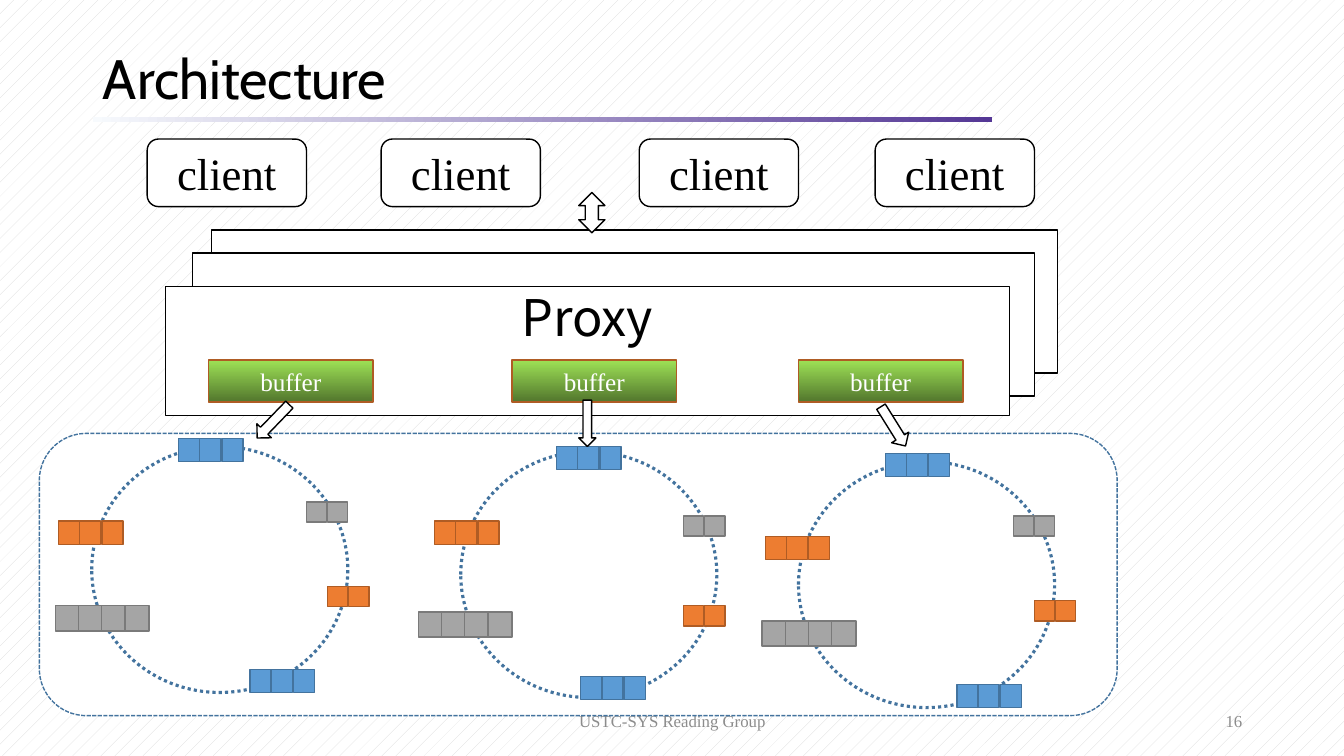
from pptx import Presentation
from pptx import util as u
from pptx.dml.color import RGBColor
from pptx.enum import dml, shapes, text

PX = 9144  # EMU per px, 100 px to the inch
SERIF = "Times New Roman"
KIND = shapes.MSO_SHAPE
ALIGN = text.PP_ALIGN
WHITE, BLACK, GREY = "FFFFFF", "000000", "8C8C8C"
BLUE, BLUE_EDGE, ORANGE_EDGE = "5B9BD5", "43739E", "AF5C24"
ORANGE, SILVER, SILVER_EDGE = "ED7D31", "A5A5A5", "7A7A7A"

# Strip name: cells, cell width, cell height, strip width, fill, edge
STRIPS = {
    "blue": (3, 21, 23, 64, BLUE, BLUE_EDGE),
    "orange": (3, 21, 23, 64, ORANGE, ORANGE_EDGE),
    "short orange": (2, 20, 20, 41, ORANGE, ORANGE_EDGE),
    "short silver": (2, 20, 20, 41, SILVER, SILVER_EDGE),
    "long silver": (4, 24, 25, 93, SILVER, SILVER_EDGE),
}

# Ring position, then the strips that sit on it
RINGS = [
    ((91, 443), [("blue", 177, 435), ("short silver", 304, 498),
                 ("long silver", 55, 601), ("blue", 248, 664),
                 ("orange", 58, 517), ("short orange", 325, 582)]),
    ((457, 448), [("blue", 552, 443), ("short silver", 678, 512),
                  ("long silver", 415, 607), ("blue", 576, 671),
                  ("orange", 431, 517), ("short orange", 678, 601)]),
    ((792, 458), [("blue", 878, 450), ("short silver", 1005, 512),
                  ("long silver", 756, 616), ("blue", 949, 679),
                  ("orange", 759, 532), ("short orange", 1026, 596)]),
]


def emu(*lengths):
    return [u.Emu(length * PX) for length in lengths]


def colour(hex_value):
    return RGBColor.from_string(hex_value)


def fill_gradient(shape, start, end, angle):
    shape.fill.gradient()
    shape.fill.gradient_angle = angle
    for stop, position, value in zip(shape.fill.gradient_stops, (0, 1), (start, end)):
        stop.position = position
        stop.color.rgb = colour(value)


def write(shape, words, size, font=SERIF, ink=BLACK, align=ALIGN.CENTER, **frame_format):
    frame = shape.text_frame
    frame_values = {"word_wrap": True, "vertical_anchor": text.MSO_ANCHOR.MIDDLE}
    for name, value in {**frame_values, **frame_format}.items():
        setattr(frame, name, value)
    para = frame.paragraphs[0]
    para.alignment = align
    span = para.add_run()
    span.text = words
    for name, value in {"name": font, "size": u.Pt(size)}.items():
        setattr(span.font, name, value)
    span.font.color.rgb = colour(ink)
    return para


def add_shape(page, kind, at, fill=WHITE, edge=BLACK, weight=1, dash=None, rotation=0):
    shape = page.shapes.add_shape(kind, *emu(*at))
    shape.shadow.inherit = False
    shape.rotation = rotation
    shape.fill.solid()
    shape.fill.fore_color.rgb = colour(fill)
    if edge is None:
        shape.line.fill.background()
        return shape
    shape.line.color.rgb = colour(edge)
    shape.line.width = u.Pt(weight)
    if dash:
        shape.line.dash_style = dash
    return shape


def add_label(page, at, words, align):
    box = page.shapes.add_textbox(*emu(*at))
    write(box, words, 12, ink=GREY, align=align)


def add_strip(page, name, left, top):
    count, width, height, total, fill, edge = STRIPS[name]
    for i in range(count):
        shift = i * (total - width) // (count - 1)
        add_shape(page, KIND.RECTANGLE, (left + shift, top, width, height), fill, edge)


def add_title(page):
    bar = add_shape(page, KIND.RECTANGLE, (92, 116, 892, 5), edge=None)
    fill_gradient(bar, "F7FAFD", "543795", 0)
    title = page.shapes.title
    title.left, title.top, title.width, title.height = emu(92, 43, 1150, 75)
    para = write(title, "Architecture", 39.6, "Cabin", align=ALIGN.LEFT)
    para.line_spacing = 0.9


def add_storage(page):
    add_shape(page, KIND.ROUNDED_RECTANGLE, (39, 430, 1069, 280),
              edge=BLUE_EDGE, dash=dml.MSO_LINE.SQUARE_DOT)
    for corner, strips in RINGS:
        add_shape(page, KIND.OVAL, (*corner, 254, 244), edge=BLUE_EDGE,
                  weight=2.25, dash=dml.MSO_LINE.ROUND_DOT)
        for strip in strips:
            add_strip(page, *strip)


def add_proxy(page):
    for at in ((210, 228, 839, 142), (191, 251, 835, 142)):
        add_shape(page, KIND.RECTANGLE, at)
    front = add_shape(page, KIND.RECTANGLE, (164, 284, 837, 128))
    write(front, "Proxy", 36, "Noto Sans CJK SC",
          vertical_anchor=text.MSO_ANCHOR.TOP, margin_top=0)
    for left in (207, 508, 792):
        buffer = add_shape(page, KIND.RECTANGLE, (left, 357, 163, 42), edge=ORANGE_EDGE)
        fill_gradient(buffer, "9EE256", "52762D", 270)
        write(buffer, "buffer", 18, ink=WHITE)
    # Arrows from the buffers to the rings
    for at, rotation in (((574, 397, 17, 46), 0), ((876, 400, 20, 46), 328),
                         ((261, 395, 20, 46), 44)):
        add_shape(page, KIND.DOWN_ARROW, at, rotation=rotation)


def add_clients(page):
    for left in (146, 378, 634, 868):
        client = add_shape(page, KIND.ROUNDED_RECTANGLE, (left, 138, 158, 67))
        write(client, "client", 32)
    add_shape(page, KIND.UP_DOWN_ARROW, (574, 191, 26, 40))


def main():
    deck = Presentation()
    deck.slide_width, deck.slide_height = emu(1333, 750)
    page = deck.slides.add_slide(deck.slide_layouts[5])

    # Patterned background
    backdrop = page.background.fill
    backdrop.patterned()
    backdrop.pattern = dml.MSO_PATTERN.PERCENT_5
    backdrop.fore_color.rgb = colour("D9D9D9")
    backdrop.back_color.rgb = colour(WHITE)

    add_title(page)
    add_label(page, (942, 695, 300, 40), "16", ALIGN.RIGHT)
    add_label(page, (442, 695, 450, 40), "USTC-SYS Reading Group", ALIGN.CENTER)
    add_storage(page)
    add_proxy(page)
    add_clients(page)
    deck.save("out.pptx")


if __name__ == "__main__":
    main()
